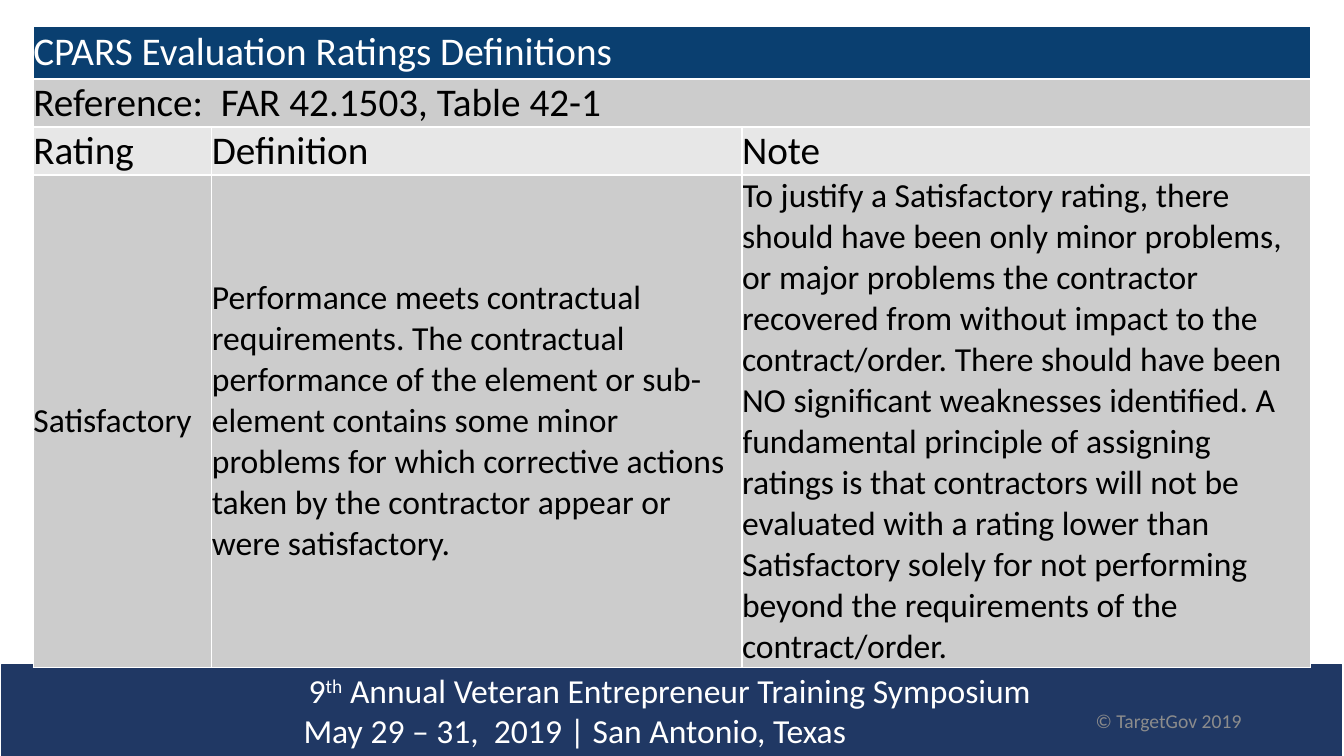
import pptx
import pptx.dml.color
import pptx.enum.shapes
import pptx.enum.text
import pptx.oxml
import pptx.oxml.ns
import pptx.util

Cm = pptx.util.Cm
Pt = pptx.util.Pt

COLORS = {
    "navy": "203864",
    "heading": "0A3F70",
    "band": "CCCCCC",
    "light": "E7E7E7",
    "white": "FFFFFF",
    "black": "000000",
    "gray": "8C8C8C",
}

DEFINITION = (
    "Performance meets contractual requirements. The contractual performance of the "
    "element or sub-element contains some minor problems for which corrective actions "
    "taken by the contractor appear or were satisfactory."
)
NOTE = (
    "To justify a Satisfactory rating, there should have been only minor problems, or "
    "major problems the contractor recovered from without impact to the contract/order. "
    "There should have been NO significant weaknesses identified. A fundamental principle "
    "of assigning ratings is that contractors will not be evaluated with a rating lower "
    "than Satisfactory solely for not performing beyond the requirements of the "
    "contract/order."
)
RATING_ROWS = [
    (1.33, "heading", "white", 28, ["CPARS Evaluation Ratings Definitions"]),
    (1.21, "band", "black", 28, ["Reference:  FAR 42.1503, Table 42-1"]),
    (1.21, "light", "black", 28, ["Rating", "Definition", "Note"]),
    (12.42, "band", "black", 24, ["Satisfactory", DEFINITION, NOTE]),
]
COLUMN_WIDTHS = [4.5, 13.36, 14.33]
FOOTER_LINES = [
    (7.48, [("9", 0), ("th", 30), (" Annual Veteran Entrepreneur Training Symposium", 0)]),
    (7.35, [("May 29 – 31,  2019 | San Antonio, Texas", 0)]),
]


class SlideBuilder:
    """Draws styled elements on the current slide."""

    def __init__(self, slide, font="Calibri"):
        self.slide = slide
        self.font = font

    def color(self, name):
        return pptx.dml.color.RGBColor.from_string(COLORS[name])

    def fill(self, target, name):
        target.fill.solid()
        target.fill.fore_color.rgb = self.color(name)

    def run(self, paragraph, text, size, color, baseline=0):
        run = paragraph.add_run()
        run.text = text
        run.font.name = self.font
        run.font.size = Pt(size)
        run.font.color.rgb = self.color(color)
        if baseline:
            run.font._element.set("baseline", str(baseline * 1000))

    def footer(self, left, top, width, height, lines):
        shape = self.slide.shapes.add_shape(
            pptx.enum.shapes.MSO_SHAPE.RECTANGLE, Cm(left), Cm(top), Cm(width), Cm(height)
        )
        shape.shadow.inherit = False
        self.fill(shape, "navy")
        shape.line.color.rgb = self.color("navy")
        shape.line.width = Pt(1)
        frame = shape.text_frame
        frame.vertical_anchor = pptx.enum.text.MSO_ANCHOR.MIDDLE
        for index, (indent, runs) in enumerate(lines):
            paragraph = frame.add_paragraph() if index else frame.paragraphs[0]
            paragraph.alignment = pptx.enum.text.PP_ALIGN.LEFT
            paragraph._p.get_or_add_pPr().set("marL", str(Cm(indent)))
            for text, baseline in runs:
                self.run(paragraph, text, 24, "white", baseline)

    def text(self, left, top, width, height, text, size, color):
        box = self.slide.shapes.add_textbox(Cm(left), Cm(top), Cm(width), Cm(height))
        frame = box.text_frame
        frame.word_wrap = True
        frame.vertical_anchor = pptx.enum.text.MSO_ANCHOR.MIDDLE
        self.run(frame.paragraphs[0], text, size, color)

    def borders(self, cell):
        properties = cell._tc.get_or_add_tcPr()
        for index, side in enumerate("LRTB"):
            properties.insert(index, pptx.oxml.parse_xml(
                f'<a:ln{side} {pptx.oxml.ns.nsdecls("a")} w="{Pt(1)}"><a:solidFill>'
                f'<a:srgbClr val="{COLORS["white"]}"/></a:solidFill></a:ln{side}>'
            ))

    def table(self, left, top, widths, rows):
        total_height = sum(row[0] for row in rows)
        table = self.slide.shapes.add_table(
            len(rows), len(widths), Cm(left), Cm(top), Cm(sum(widths)), Cm(total_height)
        ).table
        table.first_row = False
        table.horz_banding = False
        for column, width in zip(table.columns, widths):
            column.width = Cm(width)
        for index, (height, fill, color, size, texts) in enumerate(rows):
            table.rows[index].height = Cm(height)
            for cell in table.rows[index].cells:
                self.fill(cell, fill)
                self.borders(cell)
                cell.margin_left = cell.margin_right = cell.margin_top = cell.margin_bottom = 0
                cell.vertical_anchor = pptx.enum.text.MSO_ANCHOR.MIDDLE
            if len(texts) == 1:
                table.cell(index, 0).merge(table.cell(index, len(widths) - 1))
            for column, text in enumerate(texts):
                paragraph = table.cell(index, column).text_frame.paragraphs[0]
                self.run(paragraph, text, size, color)


def main():
    presentation = pptx.Presentation()
    presentation.slide_width = Cm(33.87)
    presentation.slide_height = Cm(19.05)
    builder = SlideBuilder(presentation.slides.add_slide(presentation.slide_layouts[6]))
    builder.footer(0.05, 16.74, 33.76, 2.31, FOOTER_LINES)
    builder.text(27.36, 17.75, 5.64, 0.81, "© TargetGov 2019", 14, "gray")
    builder.table(0.84, 0.66, COLUMN_WIDTHS, RATING_ROWS)
    presentation.save("out.pptx")


if __name__ == "__main__":
    main()
